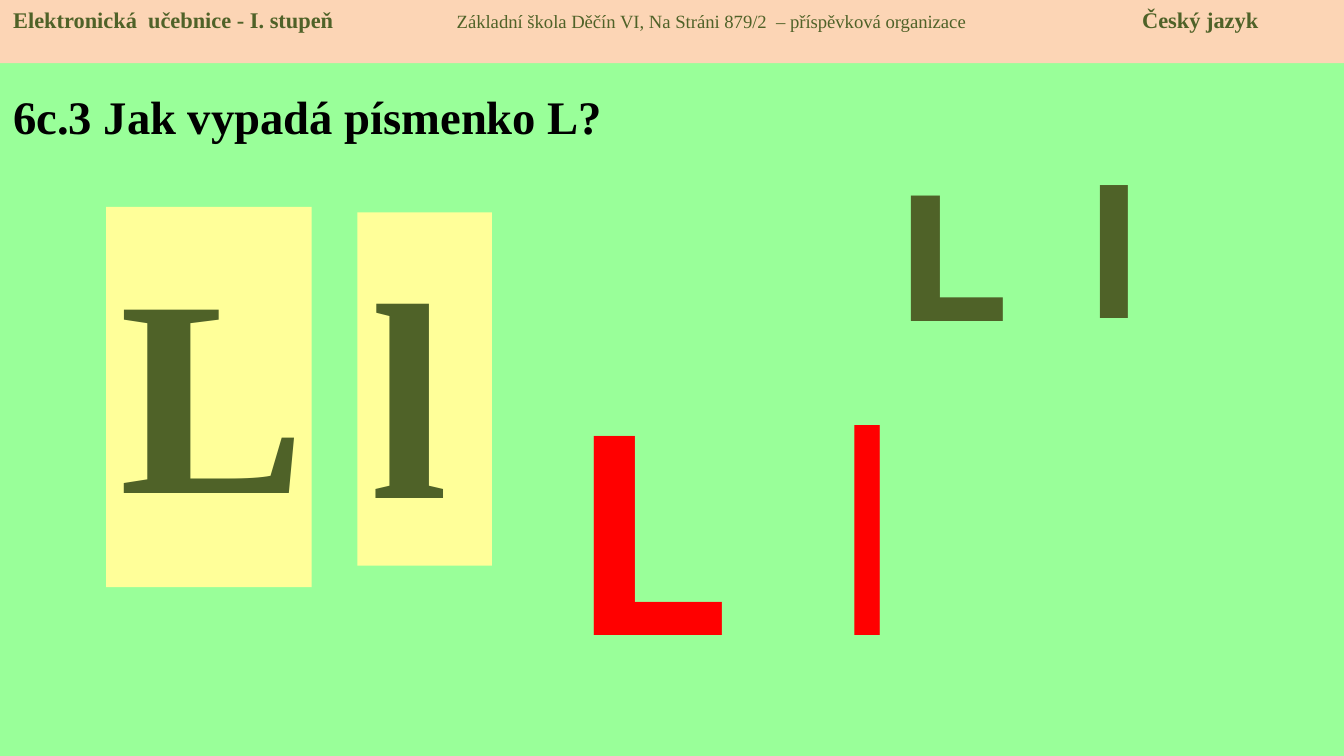
from lxml.etree import SubElement
from pptx import Presentation
from pptx.dml.color import RGBColor
from pptx.enum.shapes import MSO_SHAPE as Shape
from pptx.enum.text import MSO_ANCHOR as Anchor, PP_ALIGN as Align
from pptx.oxml.ns import qn
from pptx.util import Inches, Pt

SERIF, OLIVE, RED = "Times New Roman", "4F6228", "FF0000"


def color(hex_text):
    return RGBColor.from_string(hex_text)


def add_box(left, top, width, height, runs, font, ink, fill=None):
    """Add a box; runs are (text, size, bold) in one paragraph."""
    place = [Inches(value) for value in (left, top, width, height)]
    if fill:
        box = page.shapes.add_shape(Shape.RECTANGLE, *place)
        box.shadow.inherit = False
        box.fill.solid()
        box.fill.fore_color.rgb = color(fill)
        box.line.fill.background()
    else:
        box = page.shapes.add_textbox(*place)
    frame = box.text_frame
    frame.word_wrap = True
    frame.vertical_anchor = Anchor.TOP
    para = frame.paragraphs[0]
    para.alignment = Align.LEFT
    for text, size, bold in runs:
        span = para.add_run()
        span.text = text
        span.font.name = font
        span.font.size = Pt(size)
        span.font.bold = bold
        span.font.color.rgb = color(ink)
    return box


# Page in 16:9
deck = Presentation()
deck.slide_width = Inches(10)
deck.slide_height = deck.slide_width * 9 // 16
page = deck.slides.add_slide(deck.slide_layouts[6])
page.background.fill.solid()
page.background.fill.fore_color.rgb = color("99FF99")

# Title
title = add_box(0, 0.54, 6.69, 0.65, [("6c.3 Jak vypadá písmenko L?", 25, True)],
                SERIF, "000000")
title.text_frame.vertical_anchor = Anchor.MIDDLE

# Header band: three texts set apart by tab stops
header = add_box(0, 0, 10, 0.47, [
    ("Elektronická  učebnice - I. stupeň\t", 12, True),
    ("Základní škola Děčín VI, Na Stráni 879/2  – příspěvková organizace\t", 10, False),
    ("Český jazyk", 12, True),
], SERIF, OLIVE, "FCD5B5")
tabs = SubElement(header.text_frame.paragraphs[0]._p.get_or_add_pPr(), qn("a:tabLst"))
for stop in (3.3, 8.4):
    SubElement(tabs, qn("a:tab"), pos=str(Inches(stop)), algn="l")

# Letters: left, top, width, height, letter, size, bold, font, ink, card
letters = [
    (0.79, 1.54, 1.53, 2.83, "L", 150, True, SERIF, OLIVE, "FFFF99"),
    (2.66, 1.58, 1.00, 2.63, "l", 150, True, SERIF, OLIVE, "FFFF99"),
    (6.57, 1.01, 1.18, 1.72, "L", 96, True, "Montserrat", OLIVE, None),
    (7.99, 0.99, 0.72, 1.72, "l", 96, True, "Montserrat", OLIVE, None),
    (4.19, 2.60, 1.77, 2.63, "L", 150, True, "Roboto", RED, None),
    (6.10, 2.60, 0.59, 2.63, "l", 150, False, "Roboto", RED, None),
]
for left, top, width, height, letter, size, bold, font, ink, card in letters:
    add_box(left, top, width, height, [(letter, size, bold)], font, ink, card)

deck.save("out.pptx")
